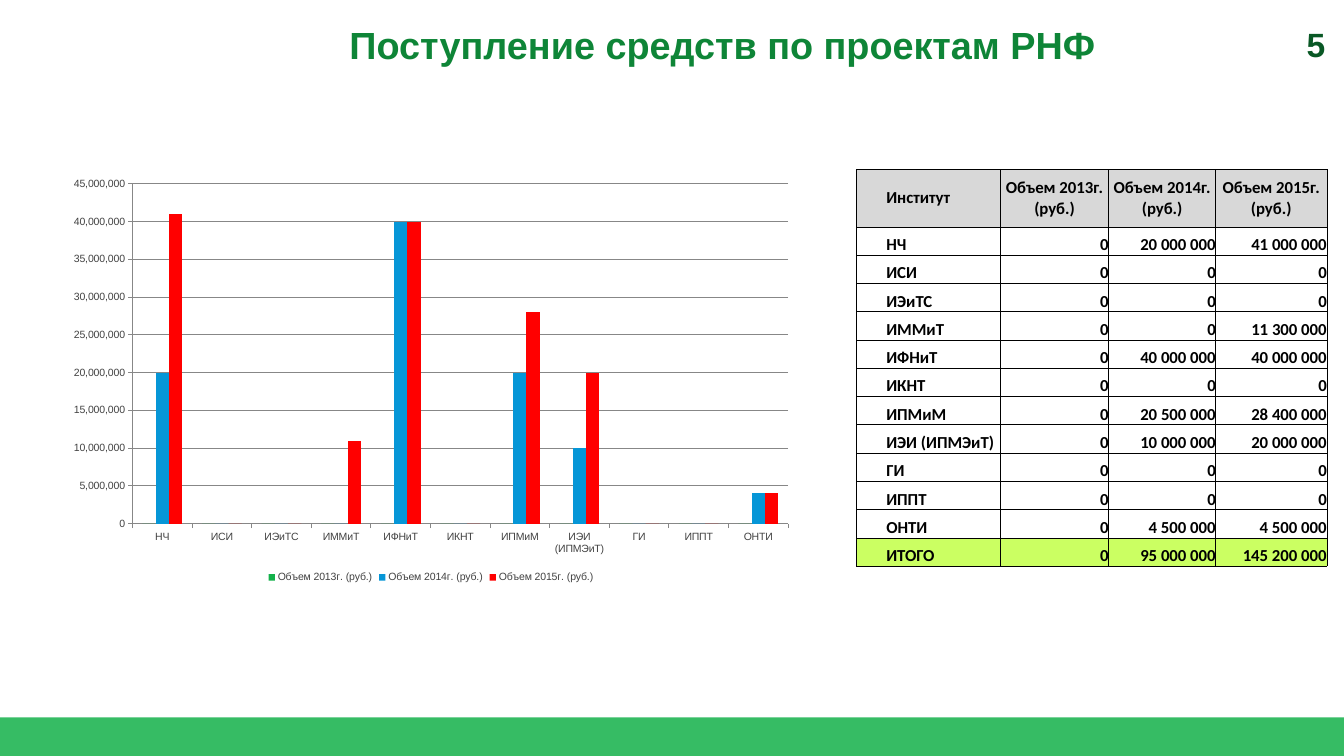
from lxml import etree
from pptx import Presentation
from pptx.chart.data import CategoryChartData
from pptx.dml.color import RGBColor
from pptx.enum.chart import XL_CHART_TYPE, XL_LEGEND_POSITION, XL_TICK_MARK
from pptx.enum.shapes import MSO_SHAPE
from pptx.enum.text import MSO_ANCHOR, PP_ALIGN
from pptx.oxml.ns import qn
from pptx.util import Cm, Pt

COLUMNS = XL_CHART_TYPE.COLUMN_CLUSTERED
LEGEND_BOTTOM = XL_LEGEND_POSITION.BOTTOM
TICK_OUT = XL_TICK_MARK.OUTSIDE
RECT = MSO_SHAPE.RECTANGLE
TOP, MIDDLE, BOTTOM = MSO_ANCHOR.TOP, MSO_ANCHOR.MIDDLE, MSO_ANCHOR.BOTTOM
LEFT, CENTER, RIGHT = PP_ALIGN.LEFT, PP_ALIGN.CENTER, PP_ALIGN.RIGHT

WIDTH, HEIGHT = 45.16, 25.4
YEARS = [f"Объем {year}г. (руб.)" for year in (2013, 2014, 2015)]
INCOME = [
    ("НЧ", 0, 20000000, 41000000),
    ("ИСИ", 0, 0, 0),
    ("ИЭиТС", 0, 0, 0),
    ("ИММиТ", 0, 0, 11300000),
    ("ИФНиТ", 0, 40000000, 40000000),
    ("ИКНТ", 0, 0, 0),
    ("ИПМиМ", 0, 20500000, 28400000),
    ("ИЭИ (ИПМЭиТ)", 0, 10000000, 20000000),
    ("ГИ", 0, 0, 0),
    ("ИППТ", 0, 0, 0),
    ("ОНТИ", 0, 4500000, 4500000),
]


def rgb(value):
    return RGBColor.from_string(value)


def write(tf, text, size=16, color="000000", font="Calibri", align=LEFT):
    p = tf.paragraphs[0]
    p.alignment = align
    r = p.add_run()
    r.text = text
    r.font.name = font
    r.font.size = Pt(size)
    r.font.bold = True
    r.font.color.rgb = rgb(color)


class Deck:
    green = "13B14A"
    series_colors = (green, "0696D7", "FF0000")
    chart_text = "424242"
    chart_line = "878787"
    head_fill = "D8D8D8"
    total_fill = "CBFF62"

    def __init__(self, prs):
        self.s = prs.slides.add_slide(prs.slide_layouts[6])

    def band(self, x, y, w, h, opacity):
        sp = self.s.shapes.add_shape(RECT, Cm(x), Cm(y), Cm(w), Cm(h))
        sp.shadow.inherit = False
        sp.line.fill.background()
        sp.fill.solid()
        sp.fill.fore_color.rgb = rgb(self.green)
        color = sp.fill._xPr.find(".//" + qn("a:srgbClr"))
        etree.SubElement(color, qn("a:alpha")).set("val", str(opacity * 1000))

    def text(self, x, y, w, h, text, anchor=TOP, **style):
        tf = self.s.shapes.add_textbox(Cm(x), Cm(y), Cm(w), Cm(h)).text_frame
        tf.word_wrap = True
        tf.vertical_anchor = anchor
        write(tf, text, font="Arial", **style)

    def cell(self, cell, text, fill, anchor, align):
        cell.margin_left = Cm(1 if align == LEFT else 0)
        cell.margin_right = cell.margin_top = cell.margin_bottom = 0
        cell.vertical_anchor = anchor
        write(cell.text_frame, text, align=align)
        tcPr = cell._tc.get_or_add_tcPr()
        for side in ("lnL", "lnR", "lnT", "lnB"):
            ln = etree.SubElement(tcPr, qn("a:" + side), w=str(Pt(0.5)))
            solid = etree.SubElement(ln, qn("a:solidFill"))
            etree.SubElement(solid, qn("a:srgbClr"), val="000000")
        if fill:
            cell.fill.solid()
            cell.fill.fore_color.rgb = rgb(fill)
        else:
            cell.fill.background()

    def table(self, x, y, widths, heights, rows):
        table = self.s.shapes.add_table(
            len(rows), len(widths), Cm(x), Cm(y), Cm(sum(widths)), Cm(sum(heights))
        ).table
        table.first_row = table.horz_banding = False
        for column, width in zip(table.columns, widths):
            column.width = Cm(width)
        fills = [self.head_fill] + [None] * (len(rows) - 2) + [self.total_fill]
        for i, (values, height, fill) in enumerate(zip(rows, heights, fills)):
            table.rows[i].height = Cm(height)
            anchor, number_align = (BOTTOM, RIGHT) if i else (MIDDLE, CENTER)
            for j, value in enumerate(values):
                align = number_align if j else LEFT
                self.cell(table.cell(i, j), value, fill, anchor, align)

    def chart(self, x, y, w, h, names, rows):
        data = CategoryChartData(number_format="#,##0")
        data.categories = [row[0] for row in rows]
        for j, name in enumerate(names, 1):
            data.add_series(name, [round(row[j], -6) for row in rows])
        chart = self.s.shapes.add_chart(COLUMNS, Cm(x), Cm(y), Cm(w), Cm(h), data).chart
        chart.has_title = False
        chart.font.name = "Arial"
        chart.font.size = Pt(10)
        chart.font.color.rgb = rgb(self.chart_text)
        chart.has_legend = True
        chart.legend.position = LEGEND_BOTTOM
        chart.legend.include_in_layout = False
        plot = chart.plots[0]
        plot.gap_width = 150
        plot.overlap = 0
        plot.vary_by_categories = False
        for series, color in zip(plot.series, self.series_colors):
            series.format.fill.solid()
            series.format.fill.fore_color.rgb = rgb(color)
        axis = chart.value_axis
        axis.minimum_scale, axis.maximum_scale, axis.major_unit = 0, 45000000, 5000000
        axis.has_major_gridlines = True
        axis.tick_labels.number_format = "#,##0"
        axis.tick_labels.number_format_is_linked = False
        chart.category_axis.major_tick_mark = axis.major_tick_mark = TICK_OUT
        for part in (axis, chart.category_axis, axis.major_gridlines):
            part.format.line.color.rgb = rgb(self.chart_line)
            part.format.line.width = Pt(0.75)


def main():
    prs = Presentation()
    prs.slide_width, prs.slide_height = Cm(WIDTH), Cm(HEIGHT)
    deck = Deck(prs)
    deck.band(0, 24.1, WIDTH, 1.3, opacity=85)
    deck.text(4.63, 0.63, 39.3, 1.7, "Поступление средств по проектам РНФ",
              anchor=MIDDLE, size=36, color="0E8537", align=CENTER)
    deck.text(42.98, 0.69, 1.8, 1.63, "5", size=32, color="095825", align=RIGHT)

    totals = [sum(column) for column in list(zip(*INCOME))[1:]]
    rows = [["Институт", *YEARS]]
    for name, *values in [*INCOME, ("ИТОГО", *totals)]:
        rows.append([name, *(f"{value:,}".replace(",", " ") for value in values)])
    heights = [1.93] + [0.95] * (len(rows) - 1)
    deck.table(28.78, 5.69, [4.84, 3.63, 3.6, 3.73], heights, rows)
    deck.chart(1.98, 5.7, 25, 14, YEARS, INCOME)
    prs.save("out.pptx")


if __name__ == "__main__":
    main()
